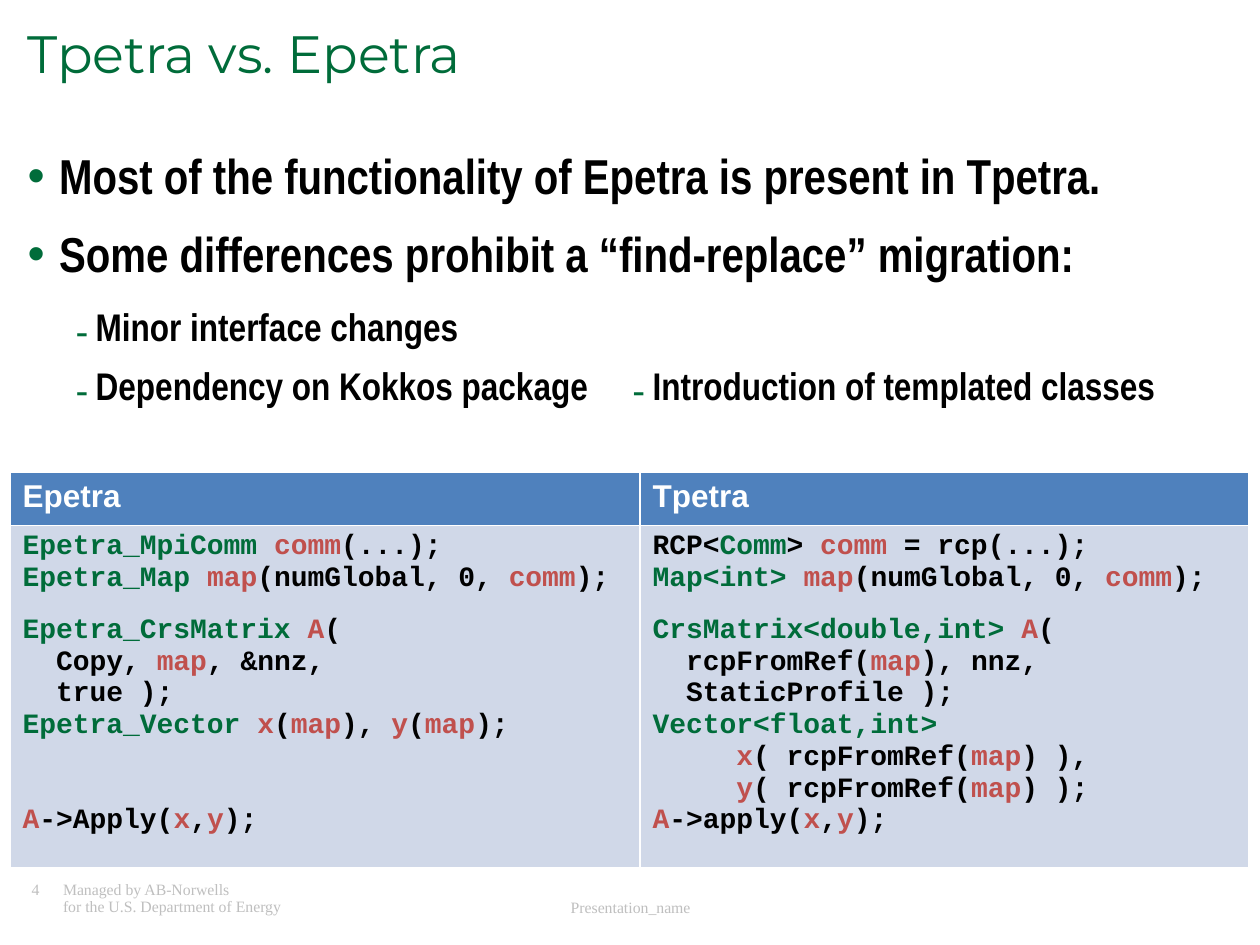
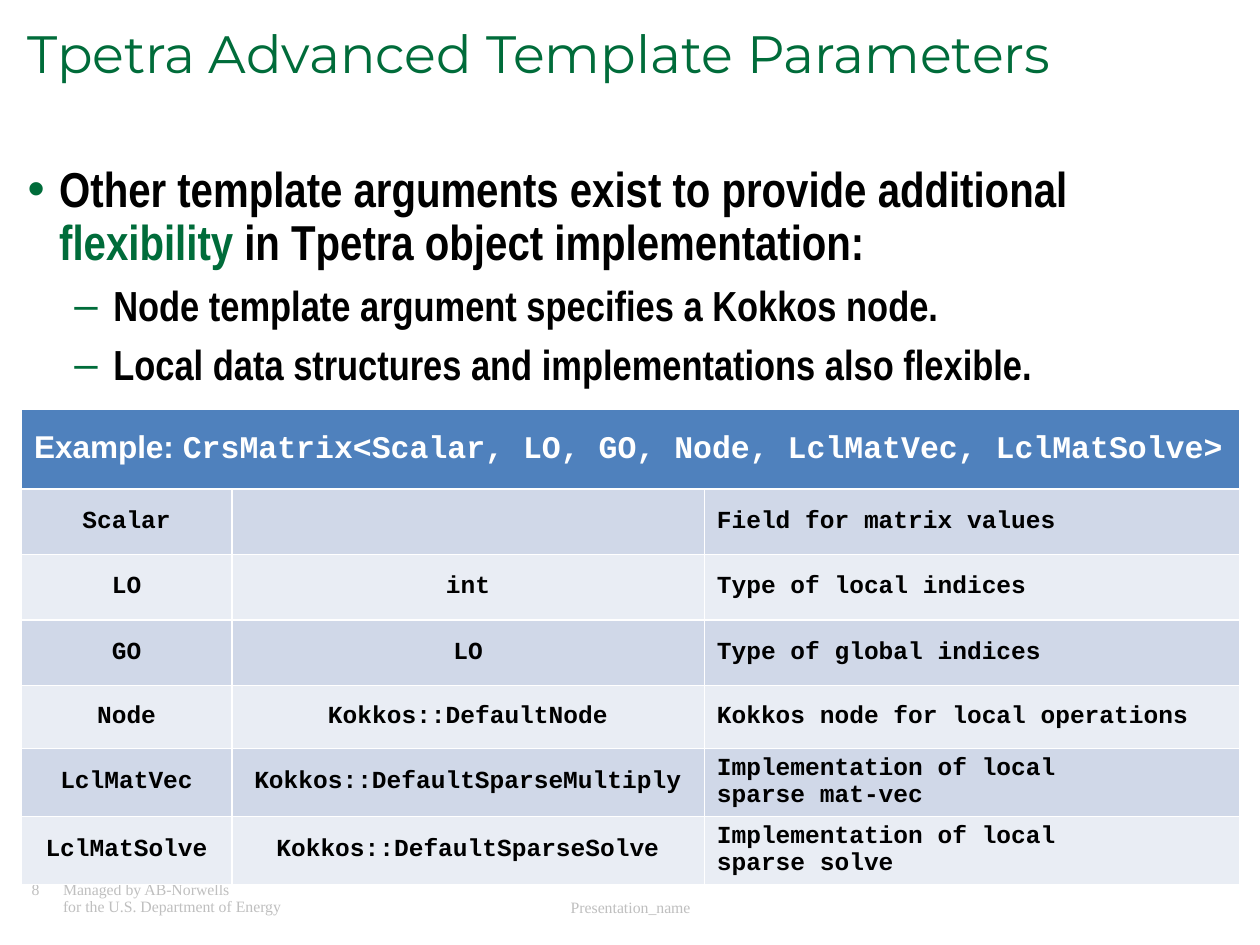
"""Build two slides that compare Tpetra with Epetra and list its template parameters."""
import lxml.etree
import pptx
import pptx.dml.color
import pptx.enum.text
import pptx.oxml.ns
import pptx.util

Inches, Pt = pptx.util.Inches, pptx.util.Pt
RGBColor = pptx.dml.color.RGBColor
ALIGN = pptx.enum.text.PP_ALIGN
ANCHOR = pptx.enum.text.MSO_ANCHOR

GREEN = RGBColor(0x00, 0x6C, 0x3A)
RED = RGBColor(0xC0, 0x50, 0x4D)
BLACK = RGBColor(0, 0, 0)
WHITE = RGBColor(255, 255, 255)
GRAY = RGBColor(0xBF, 0xBF, 0xBF)
BLUE = RGBColor(0x4F, 0x81, 0xBD)
BANDS = [RGBColor(0xE9, 0xED, 0xF4), RGBColor(0xD0, 0xD8, 0xE8)]

TITLE = dict(name="Montserrat", size=Pt(30), bold=False, color=GREEN)
POINT = dict(name="Arial Narrow", size=Pt(28), bold=True, color=BLACK)
SUBPOINT = POINT | dict(size=Pt(24))
ASIDE = POINT | dict(size=Pt(22))
HEADER = dict(name="Arial", size=Pt(18), bold=True, color=WHITE)
HEADER_CODE = HEADER | dict(name="Courier New")
CODE = dict(name="Courier New", size=Pt(16), bold=True, color=BLACK)
ENTRY = CODE | dict(size=Pt(14))
FOOTER = dict(name="Times New Roman", size=Pt(9), bold=False, color=GRAY)

LEVELS = [
    dict(font=POINT, level=0, bullet="•", margin=0.25, hang=0.25, gap=14, spacing=0.9),
    dict(font=SUBPOINT, level=1, bullet="–", margin=0.68, hang=0.31, gap=8, spacing=0.9),
]

# Within text, ~ encloses green words and ^ encloses red words.
MIGRATION = dict(
    number=4, title="Tpetra vs. Epetra", body_box=(0.12, 1.16, 9, 1.15),
    body=[(0, "Most of the functionality of Epetra is present in Tpetra."),
          (0, "Some differences prohibit a “find-replace” migration:")])
ASIDES = [["Minor interface changes", ""],
          ["Dependency on Kokkos package", "Introduction of templated classes"]]
LIBRARIES = {
    "Epetra": [
        (0, "~Epetra_MpiComm~ ^comm^(...);"),
        (0, "~Epetra_Map~ ^map^(numGlobal, 0, ^comm^);"),
        (11.5, "~Epetra_CrsMatrix~ ^A^("),
        (0, "  Copy, ^map^, &nnz,"),
        (0, "  true );"),
        (0, "~Epetra_Vector~ ^x^(^map^), ^y^(^map^);"),
        (36, "^A^->Apply(^x^,^y^);")],
    "Tpetra": [
        (0, "RCP<~Comm~> ^comm^ = rcp(...);"),
        (0, "~Map<int>~ ^map^(numGlobal, 0, ^comm^);"),
        (11.5, "~CrsMatrix<double,int>~ ^A^("),
        (0, "  rcpFromRef(^map^), nnz,"),
        (0, "  StaticProfile );"),
        (0, "~Vector<float,int>~"),
        (0, "     ^x^( rcpFromRef(^map^) ),"),
        (0, "     ^y^( rcpFromRef(^map^) );"),
        (0, "^A^->apply(^x^,^y^);")],
}

PARAMETERS = dict(
    number=8, title="Tpetra Advanced Template Parameters", body_box=(0.12, 1.26, 9, 1.91),
    body=[(0, "Other template arguments exist to provide additional "
              "~flexibility~ in Tpetra object implementation:"),
          (1, "Node template argument specifies a Kokkos node."),
          (1, "Local data structures and implementations also flexible.")])
EXAMPLE = ("Example: ", "CrsMatrix<Scalar, LO, GO, Node, LclMatVec, LclMatSolve>")
ARGUMENTS = [
    ("Scalar", "", "Field for matrix values"),
    ("LO", "int", "Type of local indices"),
    ("GO", "LO", "Type of global indices"),
    ("Node", "Kokkos::DefaultNode", "Kokkos node for local operations"),
    ("LclMatVec", "Kokkos::DefaultSparseMultiply", "Implementation of local\nsparse mat-vec"),
    ("LclMatSolve", "Kokkos::DefaultSparseSolve", "Implementation of local\nsparse solve"),
]


def add_span(para, text, font):
    span = para.add_run()
    span.text = text
    for name, value in font.items():
        if name == "color":
            span.font.color.rgb = value
        else:
            setattr(span.font, name, value)


def add_spans(para, text, font):
    for i, part in enumerate(text.split("~")):
        for j, piece in enumerate(part.split("^")):
            color = GREEN if i % 2 else RED if j % 2 else font["color"]
            if piece:
                add_span(para, piece, font | dict(color=color))


def set_indent(para, margin, hang, bullet):
    props = para._p.get_or_add_pPr()
    props.set("marL", str(Inches(margin)))
    props.set("indent", str(-Inches(hang)))
    if bullet:
        qn = pptx.oxml.ns.qn
        tint = lxml.etree.SubElement(props, qn("a:buClr"))
        lxml.etree.SubElement(tint, qn("a:srgbClr"), val=str(GREEN))
        lxml.etree.SubElement(props, qn("a:buFont"), typeface="Arial")
        lxml.etree.SubElement(props, qn("a:buChar"), char=bullet)


def add_para(frame, text, font, first, level=0, gap=0, spacing=1.0, align=ALIGN.LEFT,
             margin=None, hang=0, bullet=None):
    para = frame.paragraphs[0] if first else frame.add_paragraph()
    if margin is not None:
        set_indent(para, margin, hang, bullet)
    layout = dict(level=level, alignment=align, line_spacing=spacing,
                  space_before=Pt(0 if first else gap))
    for name, value in layout.items():
        setattr(para, name, value)
    add_spans(para, text, font)


def place(shape, box):
    for name, value in zip(("left", "top", "width", "height"), box):
        setattr(shape, name, Inches(value))
    frame = shape.text_frame
    frame.word_wrap = True
    frame.auto_size = pptx.enum.text.MSO_AUTO_SIZE.NONE
    frame.vertical_anchor = ANCHOR.TOP
    return frame


def add_text_box(page, box):
    return place(page.shapes.add_textbox(0, 0, 0, 0), box)


def add_page(deck, content):
    page = deck.slides.add_slide(deck.slide_layouts[1])
    title, body = page.placeholders
    add_para(place(title, (0.12, 0.19, 9.2, 0.54)), content["title"], TITLE, True, spacing=0.85)
    frame = place(body, content["body_box"])
    for i, (level, text) in enumerate(content["body"]):
        add_para(frame, text, first=i == 0, **LEVELS[level])

    owner = add_text_box(page, (0.25, 7, 3.08, 0.33))
    for side in ("left", "top", "right", "bottom"):
        setattr(owner, f"margin_{side}", 0)
    add_para(owner, f"{content['number']}\tManaged by AB-Norwells", FOOTER, True,
             spacing=0.9, margin=0.25, hang=0.25)
    add_para(owner, "for the U.S. Department of Energy", FOOTER, False, spacing=0.9, margin=0.25)
    add_para(add_text_box(page, (3.42, 7.08, 3.17, 0.2)), "Presentation_name", FOOTER, True,
             align=ALIGN.CENTER)
    return page


def add_grid(page, left, top, columns, rows):
    size = [Inches(v) for v in (left, top, sum(columns), sum(rows))]
    grid = page.shapes.add_table(len(rows), len(columns), *size).table
    for parts, name, lengths in ((grid.columns, "width", columns), (grid.rows, "height", rows)):
        for part, length in zip(parts, lengths):
            setattr(part, name, Inches(length))
    return grid


def fill_cell(cell, color):
    cell.fill.solid()
    cell.fill.fore_color.rgb = color


def add_asides(page):
    grid = add_grid(page, 0.5, 2.44, (4.42, 4.75), (0.47, 0.5))
    grid.first_row = grid.horz_banding = False
    for r, row in enumerate(ASIDES):
        for c, text in enumerate(row):
            cell = grid.cell(r, c)
            cell.fill.background()
            if text:
                add_para(cell.text_frame, text, ASIDE, True, margin=0.16, hang=0.16, bullet="-")


def add_code_comparison(page):
    grid = add_grid(page, 0.08, 3.75, (5, 4.83), (0.42, 2.72))
    for c, (library, lines) in enumerate(LIBRARIES.items()):
        head, code = grid.cell(0, c), grid.cell(1, c)
        fill_cell(head, BLUE)
        fill_cell(code, BANDS[1])
        add_para(head.text_frame, library, HEADER, True)
        for i, (gap, line) in enumerate(lines):
            add_para(code.text_frame, line, CODE, i == 0, gap=gap)


def add_arguments(page):
    heights = [0.63] + [0.52] * 3 + [0.5] + [0.54] * 2
    grid = add_grid(page, 0.17, 3.25, (1.67, 3.75, 4.25), heights)
    head = grid.cell(0, 0)
    head.merge(grid.cell(0, 2))
    fill_cell(head, BLUE)
    head.vertical_anchor = ANCHOR.MIDDLE
    for text, font in zip(EXAMPLE, (HEADER, HEADER_CODE)):
        add_span(head.text_frame.paragraphs[0], text, font)
    for r, row in enumerate(ARGUMENTS, 1):
        for c, text in enumerate(row):
            cell = grid.cell(r, c)
            fill_cell(cell, BANDS[r % 2])
            cell.vertical_anchor = ANCHOR.MIDDLE
            align = ALIGN.LEFT if c == 2 else ALIGN.CENTER
            for i, line in enumerate(text.split("\n")):
                add_para(cell.text_frame, line, ENTRY, i == 0, align=align)


def main():
    deck = pptx.Presentation()
    deck.slide_width, deck.slide_height = Inches(10), Inches(7.5)
    page = add_page(deck, MIGRATION)
    add_code_comparison(page)
    add_asides(page)
    add_arguments(add_page(deck, PARAMETERS))
    deck.save("out.pptx")


if __name__ == "__main__":
    main()
